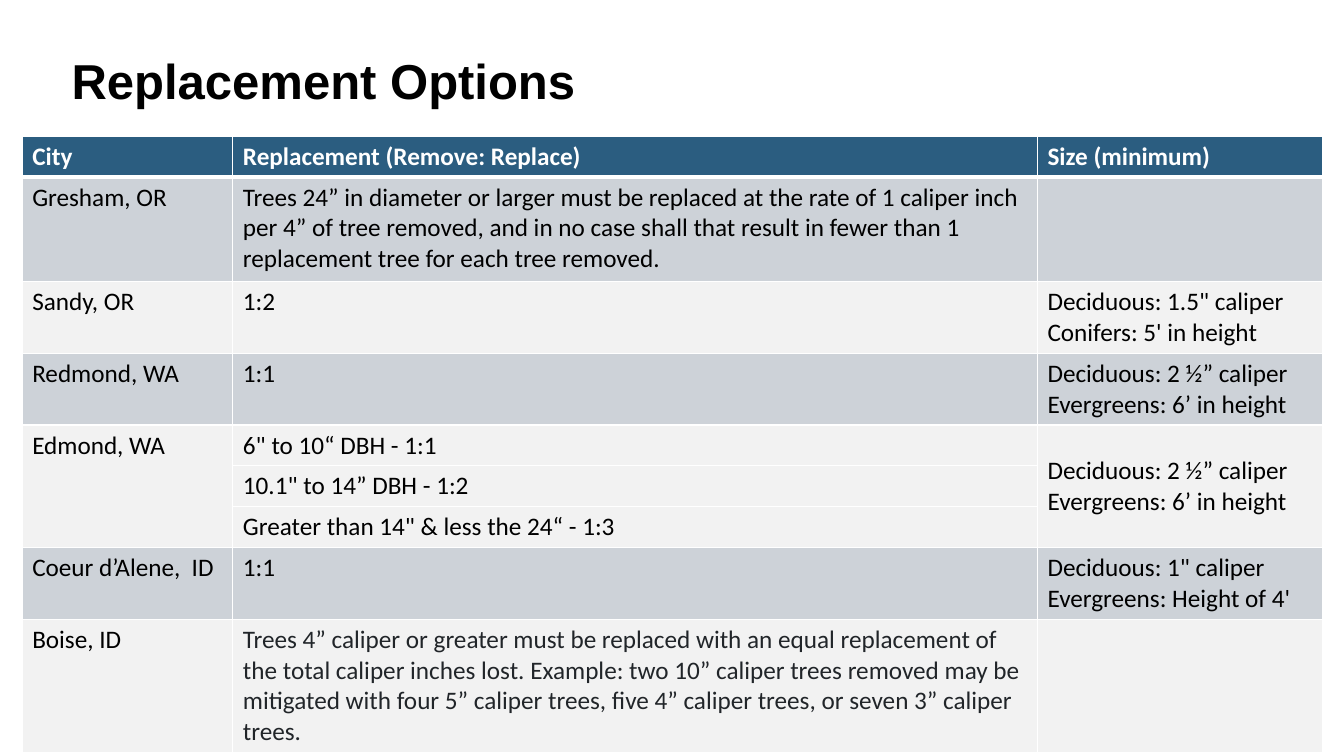
import dataclasses

import lxml.etree
import pptx
import pptx.dml.color
import pptx.enum.text
import pptx.oxml.ns
import pptx.util

Inches = pptx.util.Inches
Pt = pptx.util.Pt


@dataclasses.dataclass(frozen=True)
class Theme:
    title_font: str = "Arial"
    body_font: str = "Calibri"
    title_size: int = 35
    body_size: int = 18
    ink: str = "000000"
    soft_ink: str = "212529"
    white: str = "FFFFFF"
    header: str = "2B5D80"
    band: str = "CDD2D8"
    plain: str = "F2F2F2"
    rule: int = 1
    header_rule: int = 3


THEME = Theme()
TITLE_BOX = (0.61, 0.49, 11.5, 0.65)
TABLE_BOX = (0.22, 1.35, 12.9, 6.07)
COL_WIDTHS = (2.09, 7.98, 2.83)
ROW_HEIGHTS = (0.39, 1.04, 0.68, 0.7, 0.39, 0.39, 0.39, 0.68, 1.32)
HEADERS = ("City", "Replacement (Remove: Replace)", "Size (minimum)")
WA_SIZE = "Deciduous: 2 ½” caliper Evergreens: 6’ in height"
CITIES = (
    ("Gresham, OR",
     ("Trees 24” in diameter or larger must be replaced at the rate of 1 caliper inch "
      "per 4” of tree removed, and in no case shall that result in fewer than 1 "
      "replacement tree for each tree removed.",),
     ()),
    ("Sandy, OR", ("1:2",), ("Deciduous: 1.5\" caliper", "Conifers: 5' in height")),
    ("Redmond, WA", ("1:1",), (WA_SIZE,)),
    ("Edmond, WA",
     ("6\" to 10“ DBH - 1:1", "10.1\" to 14” DBH - 1:2", "Greater than 14\" & less the 24“ - 1:3"),
     (WA_SIZE,)),
    ("Coeur d’Alene,  ID", ("1:1",), ("Deciduous: 1\" caliper", "Evergreens: Height of 4'")),
    ("Boise, ID",
     ("Trees 4” caliper or greater must be replaced with an equal replacement of the total "
      "caliper inches lost. Example: two 10” caliper trees removed may be mitigated with "
      "four 5” caliper trees, five 4” caliper trees, or seven 3” caliper trees.",),
     ()),
)


def rgb(color):
    return pptx.dml.color.RGBColor.from_string(color)


def add_run(p, text, font, size, color, bold=False):
    r = p.add_run()
    r.text = text
    r.font.name = font
    r.font.size = Pt(size)
    r.font.bold = bold
    r.font.color.rgb = rgb(color)


def write_cell(cell, lines, color=THEME.ink, bold=False):
    tf = cell.text_frame
    for i, line in enumerate(lines):
        p = tf.paragraphs[0] if i == 0 else tf.add_paragraph()
        add_run(p, line, THEME.body_font, THEME.body_size, color, bold)


def style_cell(cell, fill, top, bottom):
    cell.fill.solid()
    cell.fill.fore_color.rgb = rgb(fill)
    tc_pr = cell._tc.get_or_add_tcPr()
    qn = pptx.oxml.ns.qn
    sides = (("L", THEME.rule), ("R", THEME.rule), ("T", top), ("B", bottom))
    for i, (side, width) in enumerate(sides):
        ln = lxml.etree.Element(qn(f"a:ln{side}"), w=str(Pt(width)))
        solid = lxml.etree.SubElement(ln, qn("a:solidFill"))
        lxml.etree.SubElement(solid, qn("a:srgbClr"), val=THEME.white)
        tc_pr.insert(i, ln)


def add_title(s, box):
    sp = s.shapes.title
    sp.left, sp.top, sp.width, sp.height = map(Inches, box)
    tf = sp.text_frame
    tf.word_wrap = True
    tf.auto_size = pptx.enum.text.MSO_AUTO_SIZE.NONE
    tf.vertical_anchor = pptx.enum.text.MSO_ANCHOR.BOTTOM
    p = tf.paragraphs[0]
    p.alignment = pptx.enum.text.PP_ALIGN.LEFT
    p.line_spacing = 0.9
    add_run(p, "Replacement Options", THEME.title_font, THEME.title_size, THEME.ink, True)


def add_city_table(s, box):
    table = s.shapes.add_table(len(ROW_HEIGHTS), len(COL_WIDTHS), *map(Inches, box)).table
    table.horz_banding = False
    for col, width in zip(table.columns, COL_WIDTHS):
        col.width = Inches(width)
    for row, height in zip(table.rows, ROW_HEIGHTS):
        row.height = Inches(height)

    for c, text in enumerate(HEADERS):
        write_cell(table.cell(0, c), (text,), THEME.white, True)
        style_cell(table.cell(0, c), THEME.header, THEME.rule, THEME.header_rule)

    first = 1
    for i, (city, options, sizes) in enumerate(CITIES):
        last = first + len(options) - 1
        fill = THEME.plain if i % 2 else THEME.band
        for r in range(first, last + 1):
            top = THEME.header_rule if r == 1 else THEME.rule
            for c in range(len(COL_WIDTHS)):
                style_cell(table.cell(r, c), fill, top, THEME.rule)
        if last > first:
            for c in (0, 2):
                table.cell(first, c).merge(table.cell(last, c))
            table.cell(first, 2).vertical_anchor = pptx.enum.text.MSO_ANCHOR.MIDDLE
        write_cell(table.cell(first, 0), (city,))
        color = THEME.soft_ink if city == "Boise, ID" else THEME.ink
        for r, option in enumerate(options, first):
            write_cell(table.cell(r, 1), (option,), color)
        write_cell(table.cell(first, 2), sizes)
        first = last + 1


def main():
    prs = pptx.Presentation()
    prs.slide_width = Inches(13.33)
    prs.slide_height = Inches(7.5)
    s = prs.slides.add_slide(prs.slide_layouts.get_by_name("Title Only"))
    s.background.fill.solid()
    s.background.fill.fore_color.rgb = rgb(THEME.white)
    add_title(s, TITLE_BOX)
    add_city_table(s, TABLE_BOX)
    prs.save("out.pptx")


if __name__ == "__main__":
    main()
